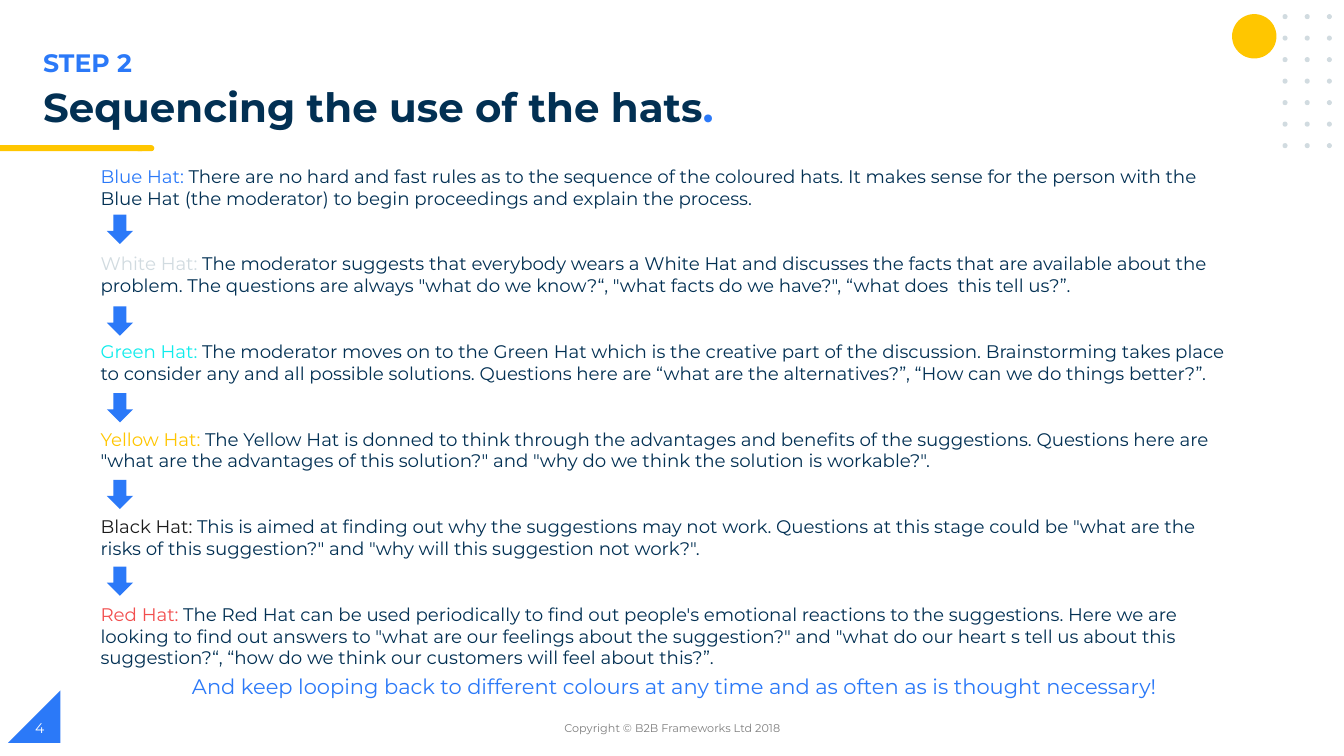
from pptx import Presentation
from pptx.dml.color import RGBColor
from pptx.enum.shapes import MSO_SHAPE
from pptx.enum.text import MSO_ANCHOR, PP_ALIGN
from pptx.util import Pt

PX = 9144
FONT = "Montserrat"
OVAL, RECT = MSO_SHAPE.OVAL, MSO_SHAPE.RECTANGLE
DOWN_ARROW, CORNER = MSO_SHAPE.DOWN_ARROW, MSO_SHAPE.RIGHT_TRIANGLE
ROUND_END = MSO_SHAPE.FLOWCHART_TERMINATOR
LEFT, CENTER = PP_ALIGN.LEFT, PP_ALIGN.CENTER
TOP, MIDDLE = MSO_ANCHOR.TOP, MSO_ANCHOR.MIDDLE
COLORS = {
    "background": "FFFFFF",
    "blue": "2B79F8",
    "navy": "023053",
    "yellow": "FFC600",
    "pale": "D1DBE0",
    "green": "0EECEC",
    "black": "1C1C1C",
    "red": "F24E4E",
    "gray": "7F7F7F",
    "white": "FFFFFF",
}
HATS = [
    ("Blue Hat: ", "blue",
     "There are no hard and fast rules as to the sequence of the coloured hats. It makes sense for "
     "the person with the Blue Hat (the moderator) to begin proceedings and explain the process."),
    ("White Hat: ", "pale",
     "The moderator suggests that everybody wears a White Hat and discusses the facts that are "
     "available about the problem. The questions are always \"what do we know?“, \"what facts do "
     "we have?\", “what does  this tell us?”."),
    ("Green Hat: ", "green",
     "The moderator moves on to the Green Hat which is the creative part of the discussion. "
     "Brainstorming takes place to consider any and all possible solutions. Questions here are "
     "“what are the alternatives?”, “How can we do things better?”."),
    ("Yellow Hat: ", "yellow",
     "The Yellow Hat is donned to think through the advantages and benefits of the suggestions. "
     "Questions here are \"what are the advantages of this solution?\" and \"why do we think the "
     "solution is workable?\"."),
    ("Black Hat: ", "black",
     "This is aimed at finding out why the suggestions may not work. Questions at this stage could "
     "be \"what are the risks of this suggestion?\" and \"why will this suggestion not work?\"."),
    ("Red Hat: ", "red",
     "The Red Hat can be used periodically to find out people's emotional reactions to the "
     "suggestions. Here we are looking to find out answers to \"what are our feelings about the "
     "suggestion?\" and \"what do our heart s tell us about this suggestion?“, “how do we think "
     "our customers will feel about this?”."),
]


def rgb(color):
    return RGBColor.from_string(COLORS[color])


def add_block(shapes, kind, box, color):
    block = shapes.add_shape(kind, *(round(v * PX) for v in box))
    block.shadow.inherit = False
    block.fill.solid()
    block.fill.fore_color.rgb = rgb(color)
    block.line.fill.background()
    return block


def add_text(shapes, box, paragraphs, size, align=LEFT, anchor=TOP, bold=False, gap=0, spacing=None):
    frame = shapes.add_textbox(*(v * PX for v in box)).text_frame
    frame.word_wrap = True
    frame.vertical_anchor = anchor
    for index, runs in enumerate(paragraphs):
        paragraph = frame.add_paragraph() if index else frame.paragraphs[0]
        paragraph.alignment = align
        if spacing:
            paragraph.line_spacing = spacing
        if index:
            paragraph.space_before = Pt(gap)
        for words, color in runs:
            run = paragraph.add_run()
            run.text = words
            run.font.name = FONT
            run.font.size = Pt(size)
            run.font.bold = bold
            run.font.color.rgb = rgb(color)


def draw_corner_ornament(shapes, box):
    left, top, width, height = box
    add_block(shapes, OVAL, (left, top, 44, 44), "yellow")
    dots = shapes.add_group_shape().shapes
    columns, rows, dot = 3, 7, 5
    grid_left = left + 50
    step_x = (width - 50 - dot) / (columns - 1)
    step_y = (height - dot) / (rows - 1)
    for row in range(rows):
        for column in range(columns):
            add_block(dots, OVAL, (grid_left + column * step_x, top + row * step_y, dot, dot), "pale")


def draw_heading(shapes, box):
    left, top, width, height = box
    add_text(shapes, (left + 33, top, 669, 40), [[("STEP 2", "blue")]], 18, bold=True)
    title = [("Sequencing the use of the hats", "navy"), (".", "blue")]
    add_text(shapes, (left + 33, top + 40, width - 33, 56), [title], 28.8, bold=True, spacing=0.9)
    rule_top = top + height - 6
    rule = shapes.add_group_shape().shapes
    add_block(rule, ROUND_END, (left + 134, rule_top, 19, 6), "yellow")
    add_block(rule, RECT, (left, rule_top, 141, 6), "yellow")


def draw_hat_sequence(shapes, box):
    left, top, width, height = box
    steps = [[(hat, color), (advice, "navy")] for hat, color, advice in HATS]
    add_text(shapes, box, steps, 13, gap=31.3)
    arrow_tops = [top + 54] + [top + 145 + 86 * step for step in range(len(HATS) - 2)]
    for arrow_top in arrow_tops:
        add_block(shapes, DOWN_ARROW, (left + 16, arrow_top, 26, 29), "blue")
    reminder = "And keep looping back to different colours at any time and as often as is thought necessary!"
    add_text(shapes, (left + 16, top + height - 9, width - 8, 35), [[(reminder, "blue")]], 15, CENTER)


def draw_footer(shapes, box):
    left, top, width, height = box
    corner = add_block(shapes, CORNER, (left, top, 52, 52), "blue")
    corner.element.spPr.xfrm.set("flipH", "1")
    text_top = top + height - 40
    add_text(shapes, (left + 17, text_top, 300, 40), [[("4", "white")]], 10, anchor=MIDDLE)
    add_text(shapes, (left + 434, text_top, 450, 40),
             [[("Copyright © B2B Frameworks Ltd 2018", "gray")]], 8, CENTER, MIDDLE)


def main():
    deck = Presentation()
    deck.slide_width, deck.slide_height = 1333 * PX, 750 * PX
    slide = deck.slides.add_slide(deck.slide_layouts[6])
    slide.background.fill.solid()
    slide.background.fill.fore_color.rgb = rgb("background")
    draw_corner_ornament(slide.shapes, (1222, 14, 99, 133))
    draw_heading(slide.shapes, (0, 42, 811, 108))
    draw_hat_sequence(slide.shapes, (90, 159, 1134, 513))
    draw_footer(slide.shapes, (8, 685, 1316, 57))
    deck.save("out.pptx")


if __name__ == "__main__":
    main()
